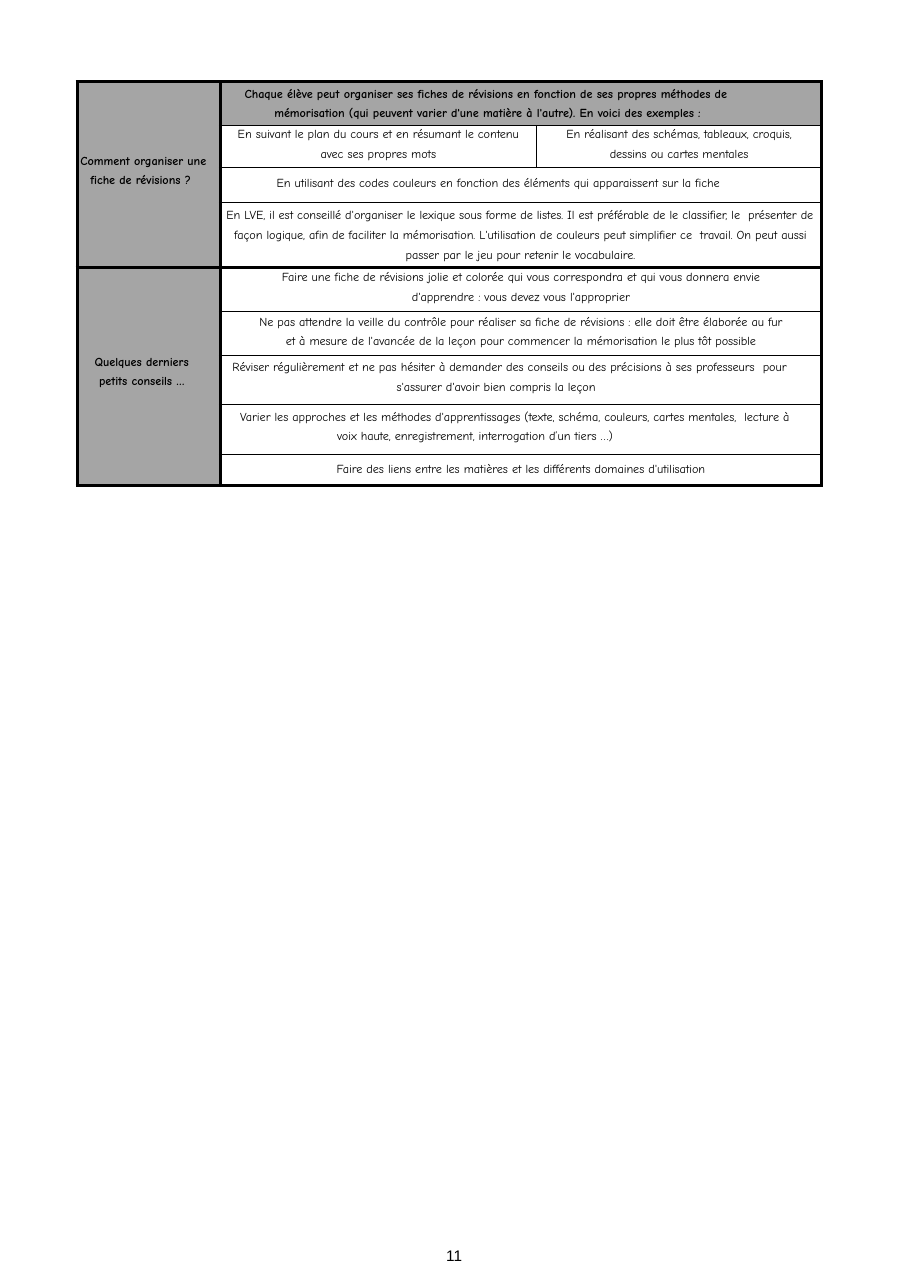
from dataclasses import dataclass

from lxml.etree import SubElement
from pptx import Presentation
from pptx.dml.color import RGBColor
from pptx.enum.text import PP_ALIGN
from pptx.oxml.ns import qn
from pptx.util import Inches, Pt

BLACK = RGBColor(0x00, 0x00, 0x00)
GRAY = RGBColor(0xA5, 0xA5, 0xA5)
BODY_FONT = "Comic Neue"
PAGE_NUMBER_FONT = "Arial"
THICK, THIN, NO_LINE = 2.25, 0.75, 0

COLUMN_WIDTHS = [1.3, 2.87, 2.59]
ROW_HEIGHTS = [0.4, 0.38, 0.32, 0.59, 0.4, 0.4, 0.44, 0.46, 0.28]
SECTION_STARTS = (0, 4)
SECTION_ENDS = (3, 8)


@dataclass
class Entry:
    """One table cell; lengths in inches, line_spacing a factor or points."""
    row: int
    column: int
    text: str = ""
    rows: int = 1
    columns: int = 1
    top: float = 0
    left: float = 0
    indent: float = 0
    right: float = 0
    line_spacing: object = None
    centered: bool = False
    heading: bool = False


def advice(row, text, **options):
    return Entry(row, 1, text, columns=2, **options)


ENTRIES = [
    Entry(0, 0, heading=True),
    advice(0, "Chaque élève peut organiser ses fiches de révisions en fonction de "
              "ses propres méthodes de mémorisation (qui peuvent varier d'une "
              "matière à l'autre). En voici des exemples :",
           left=0.49, indent=-0.27, right=0.45, line_spacing=Pt(12.8), heading=True),
    Entry(1, 0, "Comment organiser une fiche de révisions ?", rows=3, top=0.22,
          left=0.12, indent=-0.09, line_spacing=1.34, heading=True),
    Entry(1, 1, "En suivant le plan du cours et en résumant le contenu\n"
                "avec ses propres mots", top=0.02, centered=True),
    Entry(1, 2, "En réalisant des schémas, tableaux, croquis,\n"
                "dessins ou cartes mentales", top=0.02, centered=True),
    advice(2, "En utilisant des codes couleurs en fonction des éléments qui "
              "apparaissent sur la fiche", top=0.08, left=0.51),
    advice(3, "En LVE, il est conseillé d'organiser le lexique sous forme de "
              "listes. Il est préférable de le classifier, le  présenter de façon "
              "logique, afin de faciliter la mémorisation. L'utilisation de "
              "couleurs peut simplifier ce  travail. On peut aussi passer par le "
              "jeu pour retenir le vocabulaire.",
           left=0.04, indent=-0.01, right=0.05, line_spacing=Pt(13.1), centered=True),
    Entry(4, 0, "Quelques derniers petits conseils …", rows=5, top=0.75,
          left=0.2, indent=-0.04, right=0.1, line_spacing=1.34, heading=True),
    advice(4, "Faire une fiche de révisions jolie et colorée qui vous correspondra "
              "et qui vous donnera envie\n"
              "d'apprendre : vous devez vous l'approprier", top=0.03, centered=True),
    advice(5, "Ne pas attendre la veille du contrôle pour réaliser sa fiche de "
              "révisions : elle doit être élaborée au fur\n"
              "et à mesure de l'avancée de la leçon pour commencer la mémorisation "
              "le plus tôt possible", top=0.03, centered=True),
    advice(6, "Réviser régulièrement et ne pas hésiter à demander des conseils ou "
              "des précisions à ses professeurs  pour s'assurer d'avoir bien "
              "compris la leçon", left=1.6, indent=-1.49, line_spacing=1.36),
    advice(7, "Varier les approches et les méthodes d'apprentissages (texte, "
              "schéma, couleurs, cartes mentales,  lecture à voix haute, "
              "enregistrement, interrogation d’un tiers …)",
           top=0.01, left=1.06, indent=-0.88, right=0.1, line_spacing=1.36),
    advice(8, "Faire des liens entre les matières et les différents domaines "
              "d'utilisation", top=0.07, centered=True),
]


def clear_margins(frame):
    frame.margin_left = frame.margin_right = 0
    frame.margin_top = frame.margin_bottom = 0


def style_run(run, font_name, size, bold, spacing):
    """Format a run; spacing is in hundredths of a point."""
    run.font.name = font_name
    run.font.size = Pt(size)
    run.font.bold = bold
    run.font.color.rgb = BLACK
    run._r.get_or_add_rPr().set("spc", str(spacing))


def edge_widths(entry):
    """Line widths of an entry: sections are framed thick, rows parted thin."""
    last_row = entry.row + entry.rows - 1
    last_column = entry.column + entry.columns - 1
    inner = NO_LINE if entry.column == 0 else THIN
    return {
        "L": THIN if entry.column == 2 else THICK,
        "R": THIN if last_column == 1 else THICK,
        "T": THICK if entry.row in SECTION_STARTS else inner,
        "B": THICK if last_row in SECTION_ENDS else inner,
    }


def draw_borders(cell, widths):
    properties = cell._tc.get_or_add_tcPr()
    for side, width in widths.items():
        line = SubElement(properties, qn(f"a:ln{side}"), w=str(Pt(width)))
        if width:
            fill = SubElement(line, qn("a:solidFill"))
            SubElement(fill, qn("a:srgbClr"), val=str(BLACK))
        else:
            SubElement(line, qn("a:noFill"))


def frame_entry(table, entry):
    """Border and fill every grid cell that the entry covers."""
    widths = edge_widths(entry)
    for row in range(entry.rows):
        for column in range(entry.columns):
            outer = {"L": column == 0, "R": column == entry.columns - 1,
                     "T": row == 0, "B": row == entry.rows - 1}
            is_origin = row == column == 0
            cell = table.cell(entry.row + row, entry.column + column)
            clear_margins(cell)
            draw_borders(cell, {side: width if is_origin or outer[side] else NO_LINE
                                for side, width in widths.items()})
            if entry.heading:
                cell.fill.solid()
                cell.fill.fore_color.rgb = GRAY
            else:
                cell.fill.background()


def write_entry(cell, entry):
    cell.margin_top = Inches(entry.top)
    cell.text_frame.text = entry.text
    for number, para in enumerate(cell.text_frame.paragraphs):
        para.alignment = PP_ALIGN.CENTER if entry.centered else PP_ALIGN.LEFT
        para.line_spacing = entry.line_spacing
        para.space_before = Pt(3.5 if number else 0)
        properties = para._p.get_or_add_pPr()
        properties.set("marL", str(Inches(entry.left)))
        properties.set("marR", str(Inches(entry.right)))
        properties.set("indent", str(Inches(entry.indent)))
        for run in para.runs:
            style_run(run, BODY_FONT, 8, entry.heading, -5)


def add_advice_table(page):
    table = page.shapes.add_table(
        len(ROW_HEIGHTS), len(COLUMN_WIDTHS), Inches(0.7), Inches(0.74),
        Inches(sum(COLUMN_WIDTHS)), Inches(sum(ROW_HEIGHTS))).table
    table.first_row = table.horz_banding = False
    for column, width in zip(table.columns, COLUMN_WIDTHS):
        column.width = Inches(width)
    for row, height in zip(table.rows, ROW_HEIGHTS):
        row.height = Inches(height)
    for entry in ENTRIES:
        cell = table.cell(entry.row, entry.column)
        frame_entry(table, entry)
        if entry.rows > 1 or entry.columns > 1:
            cell.merge(table.cell(entry.row + entry.rows - 1,
                                  entry.column + entry.columns - 1))
        if entry.text:
            write_entry(cell, entry)


def add_page_number(page, number):
    box = page.shapes.add_textbox(Inches(4.02), Inches(11.23), Inches(0.32), Inches(0.31))
    frame = box.text_frame
    frame.word_wrap = True
    clear_margins(frame)
    frame.margin_left = Inches(0.03)
    frame.margin_top = Inches(0.08)
    frame.text = number
    style_run(frame.paragraphs[0].runs[0], PAGE_NUMBER_FONT, 10, False, 10)


def main():
    deck = Presentation()
    deck.slide_width, deck.slide_height = Inches(8.26), Inches(11.69)
    page = deck.slides.add_slide(deck.slide_layouts[6])
    add_page_number(page, "11")
    add_advice_table(page)
    deck.save("out.pptx")


if __name__ == "__main__":
    main()
